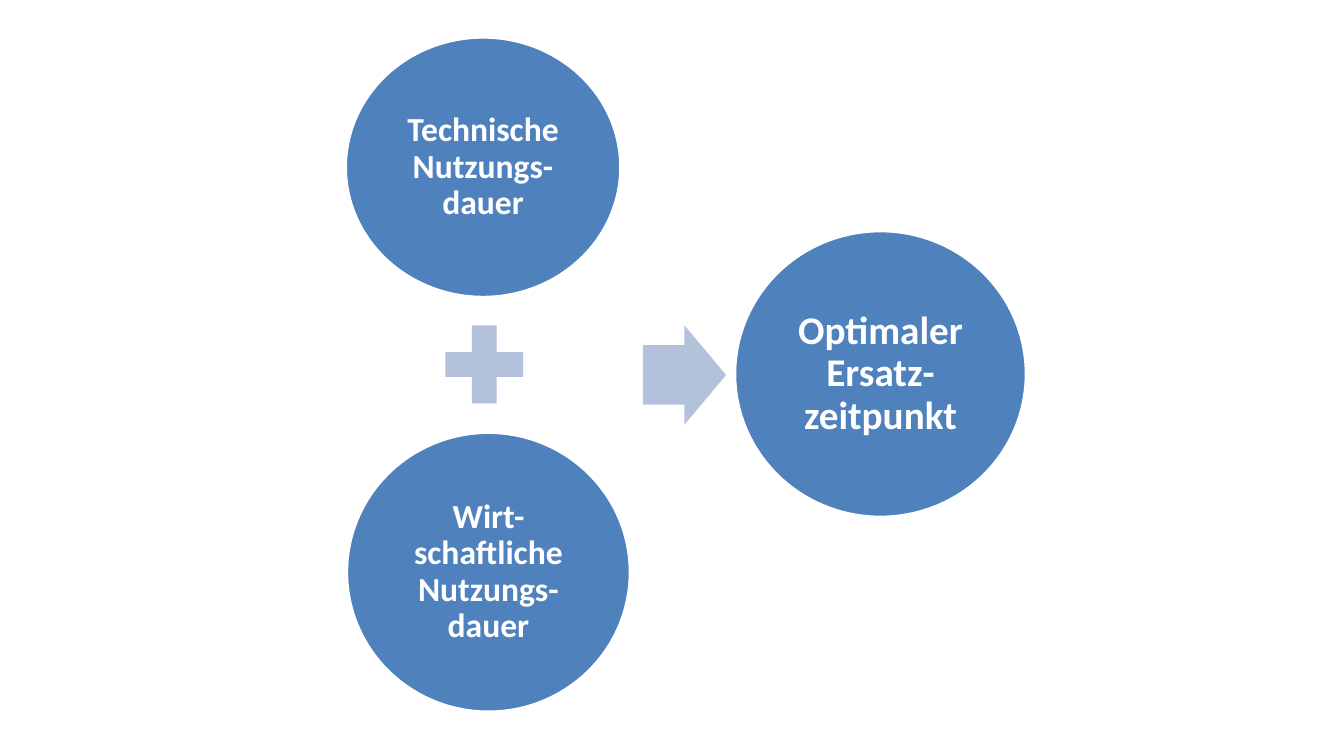
"""Build a slide that joins two useful lives into the optimal replacement time."""
import pptx
import pptx.dml.color
import pptx.enum.shapes
import pptx.enum.text
import pptx.util

Cm = pptx.util.Cm
Pt = pptx.util.Pt
SHAPES = pptx.enum.shapes.MSO_SHAPE
COLORS = {"circle": "4F81BD", "operator": "B3C1DB", "white": "FFFFFF"}
FONT = "Calibri"


def color(name):
    return pptx.dml.color.RGBColor.from_string(COLORS[name])


def add_filled_shape(slide, kind, box, fill):
    shape = slide.shapes.add_shape(kind, *(Cm(length) for length in box))
    shape.shadow.inherit = False
    shape.fill.solid()
    shape.fill.fore_color.rgb = color(fill)
    shape.line.fill.background()
    return shape


def add_circle(slide, box, text, size, inset):
    shape = add_filled_shape(slide, SHAPES.OVAL, box, "circle")
    shape.line.color.rgb = color("white")
    shape.line.width = Pt(2)

    frame = shape.text_frame
    frame.text = text
    frame.word_wrap = True
    frame.vertical_anchor = pptx.enum.text.MSO_ANCHOR.MIDDLE
    frame.margin_left = frame.margin_right = Cm(inset)
    frame.margin_top = frame.margin_bottom = Cm(inset)

    paragraph = frame.paragraphs[0]
    paragraph.alignment = pptx.enum.text.PP_ALIGN.CENTER
    paragraph.line_spacing = 0.9
    font = paragraph.runs[0].font
    font.name = FONT
    font.size = Pt(size)
    font.bold = True
    font.color.rgb = color("white")


def main():
    presentation = pptx.Presentation()
    presentation.slide_width = Cm(33.87)
    presentation.slide_height = Cm(19.05)
    slide = presentation.slides.add_slide(presentation.slide_layouts[6])

    add_circle(slide, (8.71, 0.94, 6.93, 6.55), "Technische Nutzungs-dauer", 24, 0.08)
    add_filled_shape(slide, SHAPES.MATH_PLUS, (10.87, 7.85, 2.67, 2.67), "operator")
    add_circle(slide, (8.74, 10.9, 7.14, 7.04), "Wirt-schaftliche Nutzungs-dauer", 24, 0.08)
    arrow = add_filled_shape(slide, SHAPES.RIGHT_ARROW, (16.2, 8.2, 2.1, 2.5), "operator")
    arrow.adjustments[0] = 0.6
    arrow.adjustments[1] = 0.5
    add_circle(slide, (18.52, 5.82, 7.34, 7.21), "Optimaler Ersatz-zeitpunkt", 28, 0.1)

    presentation.save("out.pptx")


if __name__ == "__main__":
    main()
